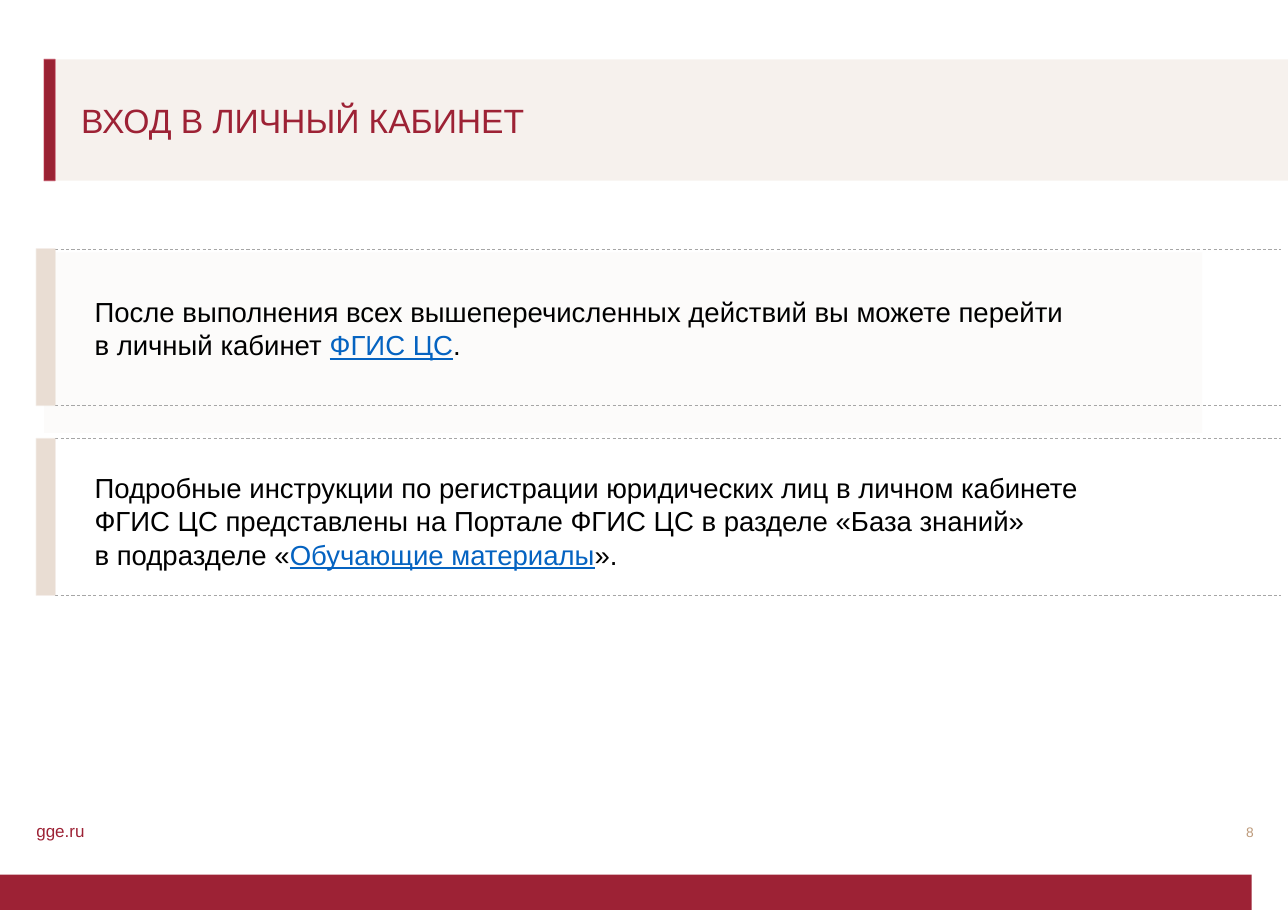
"""Build the slide on entering the personal account, with lengths in percent of the slide."""
from dataclasses import dataclass
from typing import Optional

from lxml import etree
from pptx import Presentation
from pptx import util as u
from pptx.dml import color
from pptx.enum import dml, shapes, text
from pptx.oxml import ns

WIDE, HIGH = u.Inches(11.69), u.Inches(8.27)
HUES = {"wine": "9D2235", "dark": "9A2233", "rose": "BA2C44", "sand": "E9DDD3",
        "tan": "BD9A7A", "grey": "A6A6A6", "ink": "000000", "link": "0563C1",
        "white": "FFFFFF"}
EDGE, LEFT, RIGHT = 2.82, 4.28, 99.49
TOP, STEP, TALL = 27.33, 20.83, 17.17


@dataclass
class Box:
    """A place in percent of the slide's width and height."""
    x: float
    y: float
    w: float
    h: float


@dataclass
class Block:
    """A filled rectangle."""
    box: Box
    fill: str
    alpha: int = 100
    line: Optional[str] = None


@dataclass
class Run:
    """A piece of text; a break starts a new line before it."""
    words: str
    hue: str = "ink"
    under: bool = False
    split: bool = False


@dataclass
class Label:
    """A text box with one paragraph."""
    box: Box
    size: float
    runs: list[Run]
    flush: bool = False
    lead: Optional[float | u.Pt] = None
    right: bool = False
    fill: Optional[str] = None


BLOCKS = [
    Block(Box(0, 96.01, 97.18, 3.87), "wine"),
    Block(Box(3.42, 27.69, 89.91, 19.83), "sand", 10),
    Block(Box(LEFT, 6.53, 95.72, 13.3), "sand", 39),
    Block(Box(3.42, 6.53, 0.86, 13.3), "dark", line="rose"),
]
LABELS = [
    Label(Box(EDGE, 90.08, 9.07, 2.54), 11.1, [Run("gge.ru", "wine")], flush=True, fill="white"),
    Label(Box(95.3, 90.45, 2.05, 3.75), 9, [Run("8", "tan")], flush=True,
          lead=u.Pt(10.8), right=True),
    Label(Box(5.47, 10.88, 87.34, 5.93), 22, [Run("ВХОД В ЛИЧНЫЙ КАБИНЕТ", "wine")], lead=0.9),
    Label(Box(6.5, 31.8, 77.5, 8.59), 18, [
        Run("После выполнения всех вышеперечисленных действий вы можете перейти "
            "в личный кабинет "),
        Run("ФГИС ЦС", "link", True), Run(".")]),
    Label(Box(6.5, 51.15, 79.47, 15.84), 18, [
        Run("Подробные инструкции по регистрации юридических лиц в личном кабинете "
            "ФГИС ЦС представлены на Портале ФГИС ЦС в разделе «База знаний»"),
        Run("в подразделе «", split=True),
        Run("Обучающие материалы", "link", True), Run("».")]),
]


def tint(name: str) -> color.RGBColor:
    """Look up a colour."""
    return color.RGBColor.from_string(HUES[name])


def across(part: float) -> u.Emu:
    """Turn a share of the width into a length."""
    return u.Emu(round(WIDE * part / 100))


def down(part: float) -> u.Emu:
    """Turn a share of the height into a length."""
    return u.Emu(round(HIGH * part / 100))


def place(box: Box) -> tuple[u.Emu, u.Emu, u.Emu, u.Emu]:
    """Turn a box into lengths."""
    return across(box.x), down(box.y), across(box.w), down(box.h)


def fade(node: etree._Element, alpha: int) -> None:
    """Make a solid fill see-through."""
    hue = node.find(ns.qn("a:solidFill"))[0]
    etree.SubElement(hue, ns.qn("a:alpha"), val=str(alpha * 1000))


def draw_block(slide, block: Block) -> None:
    """Draw a filled rectangle."""
    shape = slide.shapes.add_shape(shapes.MSO_SHAPE.RECTANGLE, *place(block.box))
    shape.shadow.inherit = False
    shape.fill.solid()
    shape.fill.fore_color.rgb = tint(block.fill)
    if block.alpha < 100:
        fade(shape._element.spPr, block.alpha)
    if block.line:
        shape.line.color.rgb = tint(block.line)
        shape.line.width = u.Pt(1)
        fade(shape._element.spPr.find(ns.qn("a:ln")), 41)
    else:
        shape.line.fill.background()


def draw_label(slide, label: Label) -> None:
    """Draw a text box run by run."""
    shape = slide.shapes.add_textbox(*place(label.box))
    if label.fill:
        shape.fill.solid()
        shape.fill.fore_color.rgb = tint(label.fill)
    frame = shape.text_frame
    frame.word_wrap = True
    if label.flush:
        frame.margin_left = frame.margin_right = 0
        frame.margin_top = frame.margin_bottom = 0
    para = frame.paragraphs[0]
    if label.right:
        para.alignment = text.PP_ALIGN.RIGHT
    if label.lead:
        para.line_spacing = label.lead
    for run in label.runs:
        if run.split:
            para.add_line_break()
        piece = para.add_run()
        piece.text = run.words
        piece.font.name = "Arial"
        piece.font.size = u.Pt(label.size)
        piece.font.color.rgb = tint(run.hue)
        piece.font.underline = run.under


def draw_rule(slide, y: float) -> None:
    """Draw a dashed line across the slide."""
    rule = slide.shapes.add_connector(shapes.MSO_CONNECTOR.STRAIGHT,
                                      across(LEFT), down(y), across(RIGHT), down(y))
    rule.line.color.rgb = tint("grey")
    rule.line.width = u.Pt(0.5)
    rule.line.dash_style = dml.MSO_LINE.DASH
    etree.SubElement(rule._element.spPr, ns.qn("a:effectLst"))


def main() -> None:
    """Build and save the slide."""
    deck = Presentation()
    deck.slide_width, deck.slide_height = WIDE, HIGH
    slide = deck.slides.add_slide(deck.slide_layouts[6])
    for block in BLOCKS:
        draw_block(slide, block)
    for band in range(2):
        top = TOP + band * STEP
        draw_rule(slide, top)
        draw_rule(slide, top + TALL)
        draw_block(slide, Block(Box(EDGE, top, LEFT - EDGE, TALL), "sand", line="sand"))
    for label in LABELS:
        draw_label(slide, label)
    deck.save("out.pptx")


if __name__ == "__main__":
    main()
